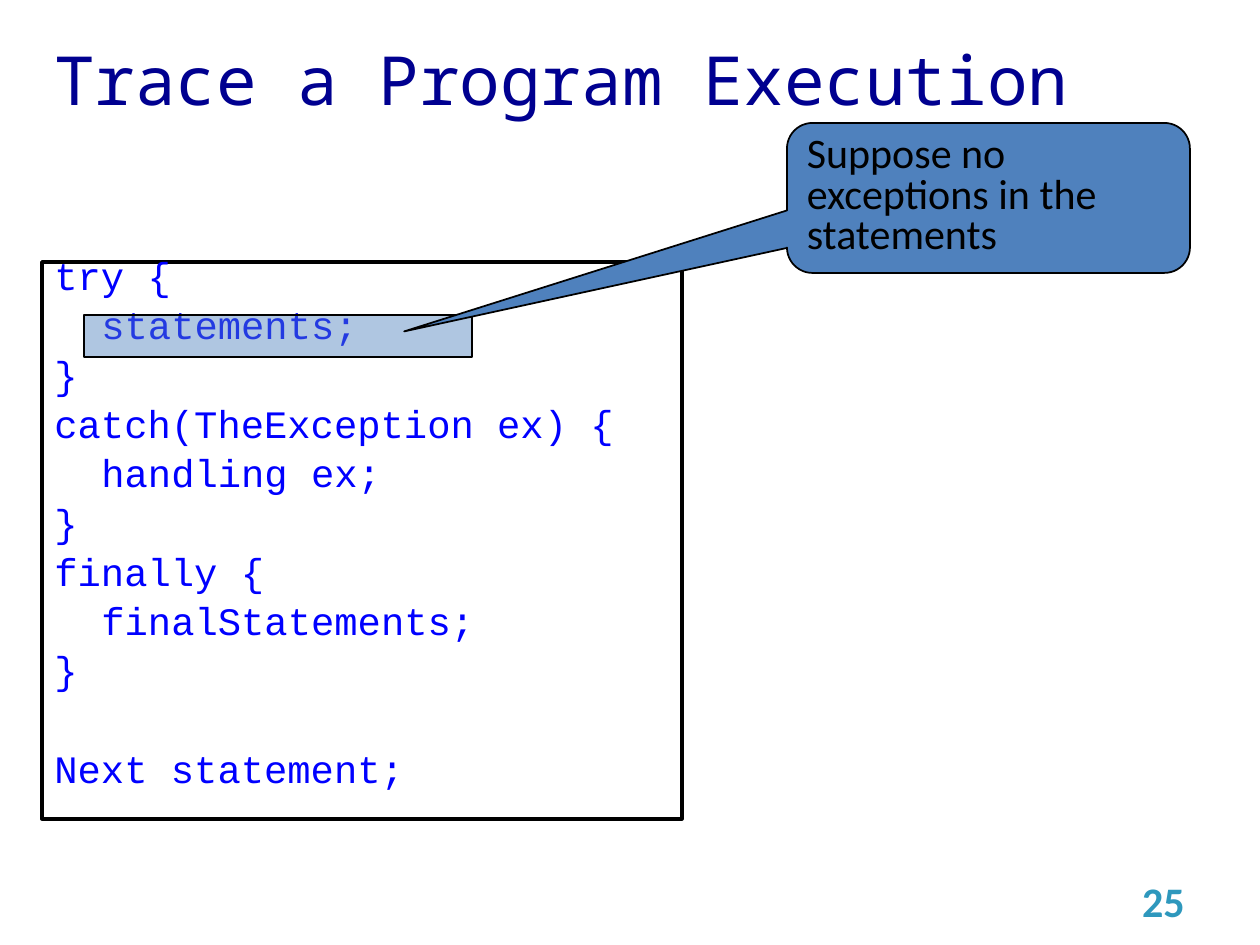
from lxml import etree
from pptx import Presentation
from pptx import util as u
from pptx.dml.color import RGBColor
from pptx.enum import shapes, text
from pptx.oxml import ns

SCALE = u.Inches(1) // 126
INK = RGBColor(0x00, 0x00, 0x00)
PAPER = RGBColor(0xFF, 0xFF, 0xFF)
NAVY = RGBColor(0x00, 0x00, 0x90)
CODE_BLUE = RGBColor(0x00, 0x00, 0xFF)
STEEL = RGBColor(0x4F, 0x81, 0xBD)
TEAL = RGBColor(0x2E, 0x98, 0xBD)

TITLE_FONT = {"name": "Noto Sans Mono", "size": u.Pt(38.7)}
CODE_FONT = {"name": "Courier New", "size": u.Pt(22.2)}
NOTE_FONT = {"name": "Calibri", "size": u.Pt(24)}
NUMBER_FONT = {**NOTE_FONT, "bold": True}

CODE_INDENT = 47
CODE_SPACING = 0.6
CODE_GAP = u.Pt(12.2)
BLOCK_GAP = u.Pt(40.6)
CODE_LINES = [
    ("try {", 0, CODE_GAP),
    ("statements;", 1, CODE_GAP),
    ("}", 0, CODE_GAP),
    ("catch(TheException ex) {", 0, CODE_GAP),
    ("handling ex;", 1, CODE_GAP),
    ("}", 0, CODE_GAP),
    ("finally {", 0, CODE_GAP),
    ("finalStatements;", 1, CODE_GAP),
    ("}", 0, CODE_GAP),
    ("Next statement;", 0, BLOCK_GAP),
]


def px(*lengths):
    return [length * SCALE for length in lengths]


def apply(target, formats):
    for name, value in formats.items():
        setattr(target, name, value)


def write(para, wording, font, color, **formats):
    apply(para, formats)
    span = para.add_run()
    span.text = wording
    apply(span.font, font)
    span.font.color.rgb = color


def add_label(page, place, wording, font, color, **formats):
    box = page.shapes.add_textbox(*px(*place))
    apply(box.text_frame, {"word_wrap": True, "vertical_anchor": text.MSO_ANCHOR.MIDDLE})
    write(box.text_frame.paragraphs[0], wording, font, color, **formats)


def add_box(page, kind, place, fill, line_width):
    box = page.shapes.add_shape(kind, *px(*place))
    box.shadow.inherit = False
    box.fill.solid()
    box.fill.fore_color.rgb = fill
    box.line.color.rgb = INK
    box.line.width = u.Pt(line_width)
    apply(box.text_frame, {"word_wrap": True, "vertical_anchor": text.MSO_ANCHOR.TOP})
    return box


def add_code(page, place):
    frame = add_box(page, shapes.MSO_SHAPE.RECTANGLE, place, PAPER, 2).text_frame
    for index, (wording, level, gap) in enumerate(CODE_LINES):
        para = frame.add_paragraph() if index else frame.paragraphs[0]
        write(para, wording, CODE_FONT, CODE_BLUE, alignment=text.PP_ALIGN.LEFT,
              line_spacing=CODE_SPACING, space_before=gap)
        para._p.get_or_add_pPr().set("marL", str(level * CODE_INDENT * SCALE))


def add_highlight(page, place, opacity):
    box = add_box(page, shapes.MSO_SHAPE.RECTANGLE, place, STEEL, 1)
    color = box._element.spPr.find(ns.qn("a:solidFill"))[0]
    etree.SubElement(color, ns.qn("a:alpha")).set("val", str(opacity * 1000))


def add_callout(page, place, adjustments, wording):
    box = add_box(page, shapes.MSO_SHAPE.ROUNDED_RECTANGULAR_CALLOUT, place, STEEL, 1)
    for index, value in enumerate(adjustments):
        box.adjustments[index] = value
    write(box.text_frame.paragraphs[0], wording, NOTE_FONT, INK,
          alignment=text.PP_ALIGN.LEFT, line_spacing=0.8)


def main():
    deck = Presentation()
    apply(deck, {"slide_width": u.Inches(10), "slide_height": u.Inches(7.5)})
    page = deck.slides.add_slide(deck.slide_layouts[6])
    add_label(page, (42, 42, 1124, 73), "Trace a Program Execution", TITLE_FONT, NAVY)
    add_code(page, (42, 262, 640, 557))
    add_highlight(page, (84, 315, 388, 42), 45)
    add_callout(page, (787, 123, 403, 150), (-1.45, 0.89, 0.17),
                "Suppose no exceptions in the statements")
    add_label(page, (903, 876, 294, 50), "25", NUMBER_FONT, TEAL,
              alignment=text.PP_ALIGN.RIGHT)
    deck.save("out.pptx")


if __name__ == "__main__":
    main()
